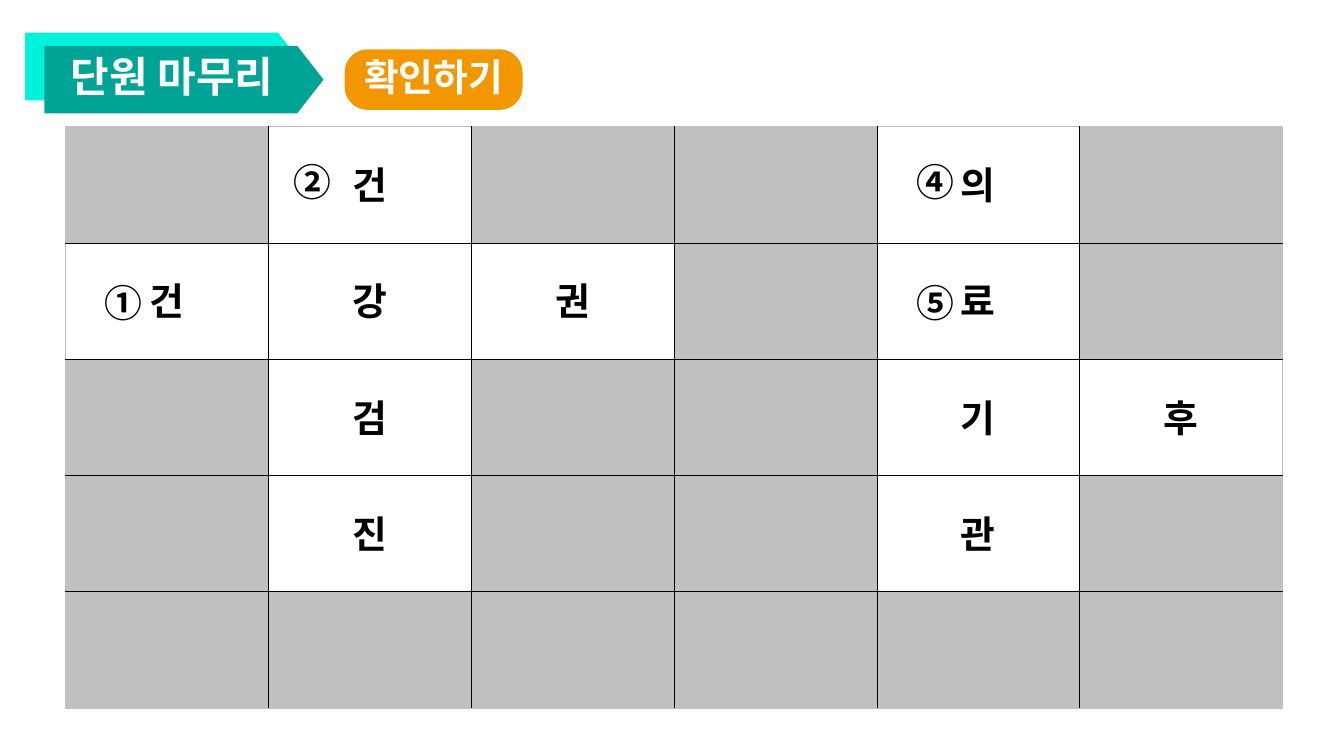
"""Build the unit review slide with its solved crossword grid."""
from dataclasses import dataclass

from lxml import etree
from pptx import Presentation
from pptx.dml.color import RGBColor
from pptx.enum.shapes import MSO_SHAPE
from pptx.enum.text import MSO_ANCHOR, MSO_AUTO_SIZE, PP_ALIGN
from pptx.oxml.ns import qn
from pptx.shapes.autoshape import Shape
from pptx.slide import Slide
from pptx.table import _Cell
from pptx.text.text import TextFrame
from pptx.util import Inches, Pt

PENTAGON, ROUNDED = MSO_SHAPE.PENTAGON, MSO_SHAPE.ROUNDED_RECTANGLE
TOP, MIDDLE = MSO_ANCHOR.TOP, MSO_ANCHOR.MIDDLE
LEFT, CENTER = PP_ALIGN.LEFT, PP_ALIGN.CENTER
GROW = MSO_AUTO_SIZE.SHAPE_TO_FIT_TEXT

FONT = "Noto Sans CJK KR"
BLACK = RGBColor(0x00, 0x00, 0x00)
WHITE = RGBColor(0xFF, 0xFF, 0xFF)
GREY = RGBColor(0xC0, 0xC0, 0xC0)
AQUA = RGBColor(0x00, 0xF2, 0xDB)
TEAL = RGBColor(0x00, 0xA4, 0x96)
ORANGE = RGBColor(0xF2, 0x97, 0x00)

SLIDE_W, SLIDE_H = 26.67, 15
GRID_X, GRID_Y, GRID_W, GRID_H = 1.3, 2.51, 24.15, 11.54
BLOCKED = "."
ANSWERS = [".건..의.", "건강권.료.", ".검..기후", ".진..관.", "......"]
ROWS, COLS = len(ANSWERS), len(ANSWERS[0])
COL_W, ROW_H = GRID_W / COLS, GRID_H / ROWS


@dataclass
class Box:
    x: float
    y: float
    w: float
    h: float

    def emu(self) -> list[int]:
        return [Inches(v) for v in (self.x, self.y, self.w, self.h)]


@dataclass
class Marker:
    text: str
    col: float
    row: float


ARROWS = [(Box(0.5, 0.65, 5.54, 1.34), AQUA), (Box(0.88, 0.91, 5.54, 1.34), TEAL)]
BADGE = Box(6.84, 0.98, 3.53, 1.2)
TITLE = Box(1.3, 1.07, 4.41, 1.01)
MARKERS = [
    Marker("②", 1.1, 0.3),
    Marker("①", 0.17, 1.34),
    Marker("④", 4.17, 0.3),
    Marker("⑤", 4.17, 1.34),
]


def write(tf: TextFrame, text: str, size: int, color: RGBColor, align: PP_ALIGN) -> None:
    tf.text = text
    p = tf.paragraphs[0]
    p.alignment = align
    p.line_spacing = 0.9
    r = p.runs[0]
    r.font.name, r.font.size, r.font.bold = FONT, Pt(size), True
    r.font.color.rgb = color
    etree.SubElement(r._r.get_or_add_rPr(), qn("a:ea"), typeface=FONT)


def add_block(s: Slide, kind: MSO_SHAPE, box: Box, adj: float, color: RGBColor) -> Shape:
    sp = s.shapes.add_shape(kind, *box.emu())
    sp.adjustments[0] = adj
    sp.shadow.inherit = False
    sp.fill.solid()
    sp.fill.fore_color.rgb = color
    sp.line.fill.background()
    return sp


def add_title(s: Slide) -> None:
    sp = s.shapes.title
    sp.left, sp.top, sp.width, sp.height = TITLE.emu()
    tf = sp.text_frame
    write(tf, "단원 마무리", 60, WHITE, LEFT)
    tf.vertical_anchor, tf.auto_size, tf.word_wrap = TOP, GROW, True
    sp.element.getparent().append(sp.element)


def add_marker(s: Slide, marker: Marker) -> None:
    box = Box(GRID_X + marker.col * COL_W, GRID_Y + marker.row * ROW_H, 0.91, 0.92)
    tf = s.shapes.add_textbox(*box.emu()).text_frame
    write(tf, marker.text, 54, BLACK, CENTER)
    tf.auto_size, tf.word_wrap = GROW, False


def set_borders(cell: _Cell, row: int, col: int) -> None:
    outer = {"L": col == 0, "R": col == COLS - 1, "T": row == 0, "B": row == ROWS - 1}
    for side, is_outer in outer.items():
        ln = etree.SubElement(cell._tc.get_or_add_tcPr(), qn(f"a:ln{side}"), w=str(Pt(1)))
        fill = etree.SubElement(ln, qn("a:solidFill"))
        etree.SubElement(fill, qn("a:srgbClr"), val=str(GREY if is_outer else BLACK))


def add_crossword(s: Slide) -> None:
    box = Box(GRID_X, GRID_Y, GRID_W, GRID_H)
    table = s.shapes.add_table(ROWS, COLS, *box.emu()).table
    table.first_row = table.horz_banding = False
    for row, letters in enumerate(ANSWERS):
        for col, letter in enumerate(letters):
            cell = table.cell(row, col)
            set_borders(cell, row, col)
            cell.fill.solid()
            cell.fill.fore_color.rgb = GREY if letter == BLOCKED else WHITE
            cell.vertical_anchor = MIDDLE
            if letter != BLOCKED:
                write(cell.text_frame, letter, 54, BLACK, CENTER)


def main() -> None:
    prs = Presentation()
    prs.slide_width, prs.slide_height = Inches(SLIDE_W), Inches(SLIDE_H)
    s = prs.slides.add_slide(prs.slide_layouts[5])
    for box, color in ARROWS:
        add_block(s, PENTAGON, box, 0.39, color)
    add_title(s)
    tf = add_block(s, ROUNDED, BADGE, 0.38, ORANGE).text_frame
    write(tf, "확인하기", 54, WHITE, CENTER)
    tf.vertical_anchor, tf.word_wrap = MIDDLE, False
    add_crossword(s)
    for marker in MARKERS:
        add_marker(s, marker)
    prs.save("out.pptx")


if __name__ == "__main__":
    main()
